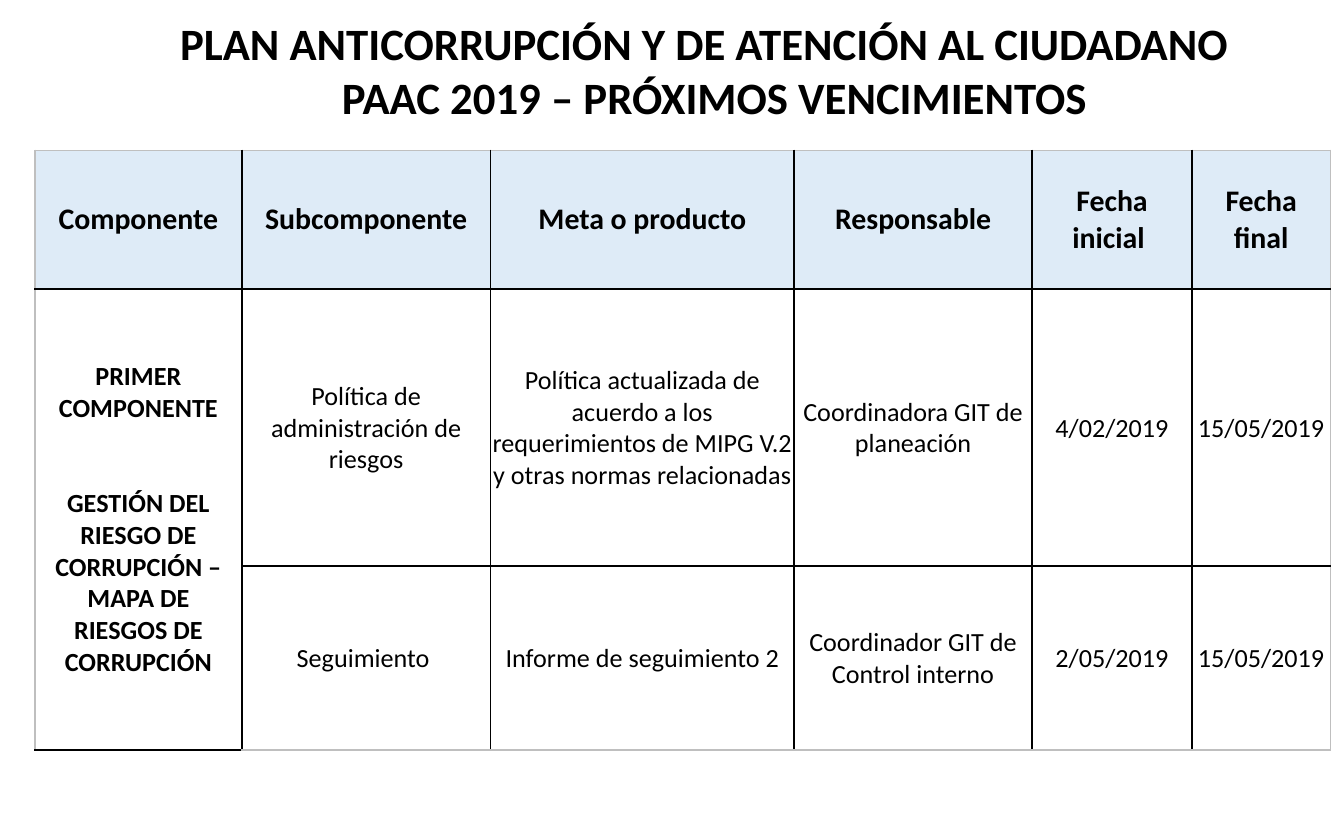
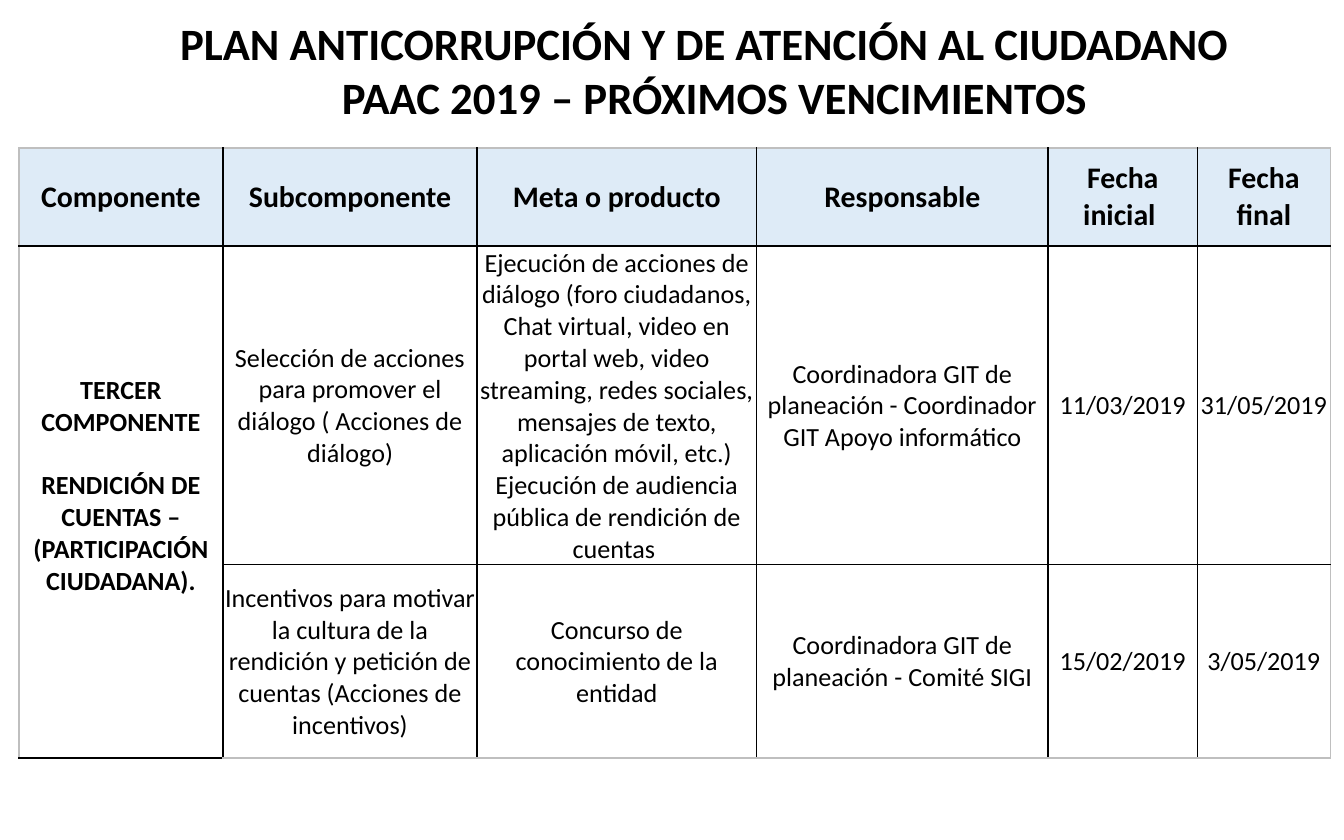
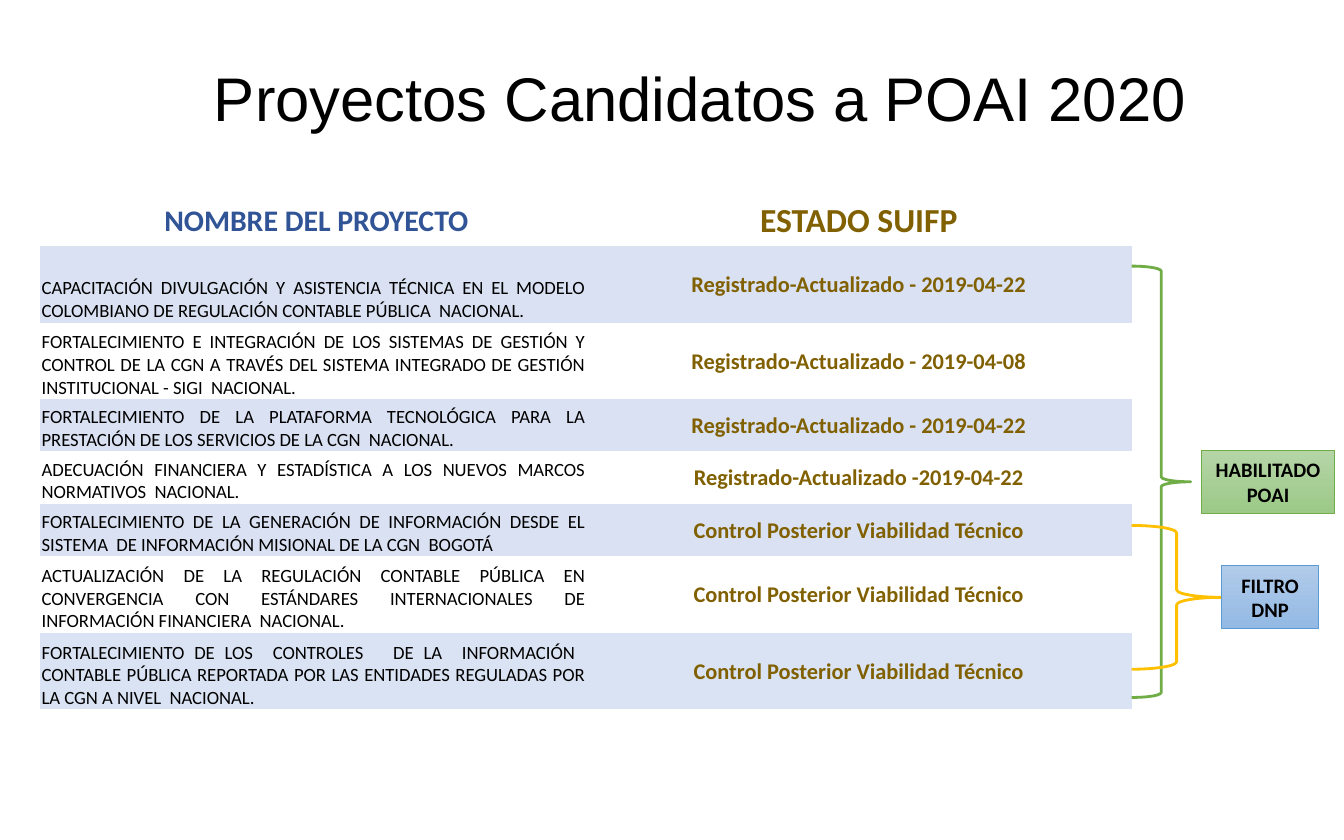
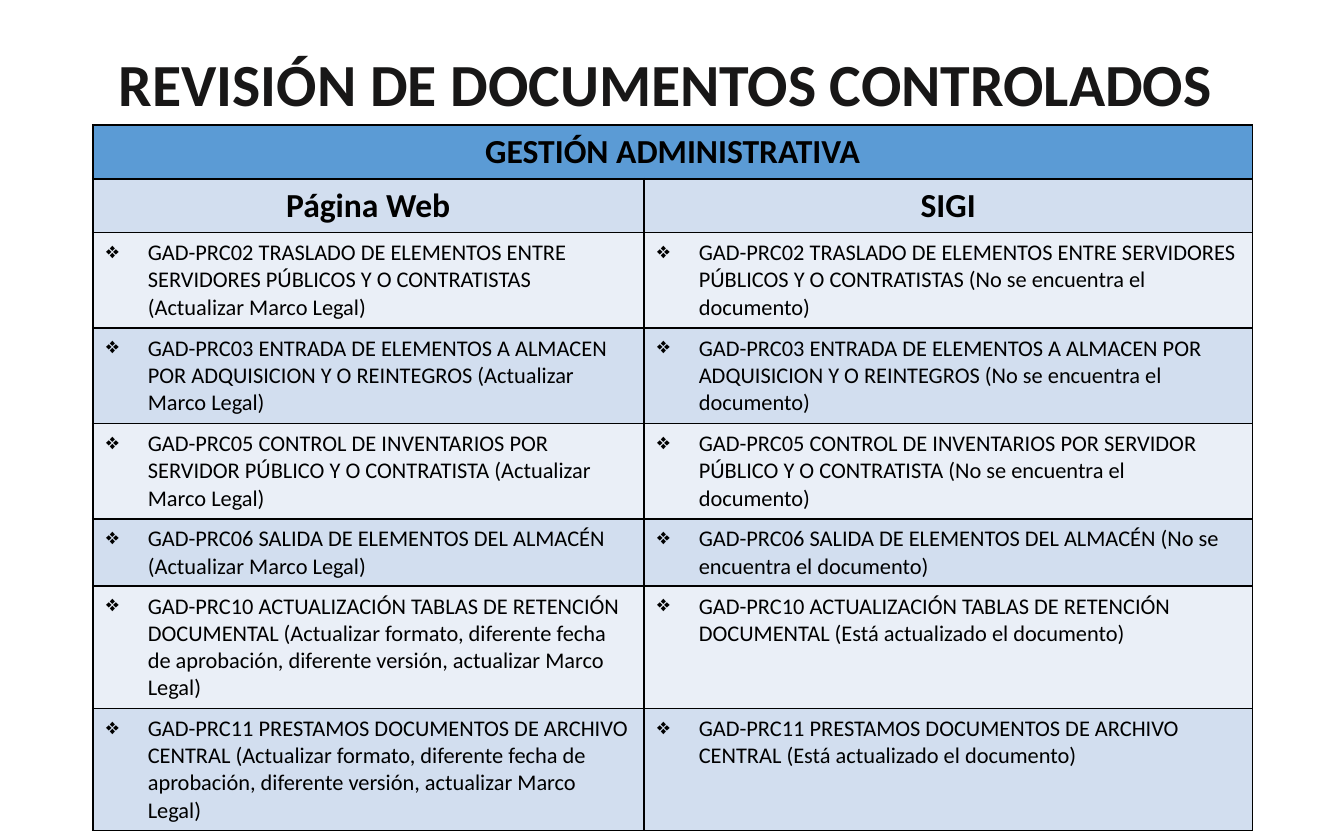
from lxml import etree
from pptx import Presentation
from pptx.dml.color import RGBColor
from pptx.enum.shapes import MSO_SHAPE
from pptx.enum.text import MSO_ANCHOR, PP_ALIGN
from pptx.oxml.ns import qn
from pptx.util import Inches, Pt

CENTER, LEFT, JUSTIFY = PP_ALIGN.CENTER, PP_ALIGN.LEFT, PP_ALIGN.JUSTIFY
TOP, MIDDLE, BOTTOM = MSO_ANCHOR.TOP, MSO_ANCHOR.MIDDLE, MSO_ANCHOR.BOTTOM
RECTANGLE, BRACE = MSO_SHAPE.RECTANGLE, MSO_SHAPE.RIGHT_BRACE

BLACK = RGBColor(0x00, 0x00, 0x00)
INK = RGBColor(0x18, 0x17, 0x17)
GRAY = RGBColor(0xBF, 0xBF, 0xBF)
HEADER_BLUE = RGBColor(0xDE, 0xEB, 0xF7)
TITLE_BLUE = RGBColor(0x30, 0x54, 0x96)
BAND_BLUE = RGBColor(0xD9, 0xE1, 0xF2)
LAST_BAND_BLUE = RGBColor(0xDA, 0xE3, 0xF3)
STRONG_BLUE = RGBColor(0x5B, 0x9B, 0xD5)
MID_BLUE = RGBColor(0xD2, 0xDE, 0xEF)
PALE_BLUE = RGBColor(0xEA, 0xEF, 0xF7)
FILTER_TOP = RGBColor(0xB1, 0xCB, 0xE9)
FILTER_BOTTOM = RGBColor(0x93, 0xB9, 0xE4)
BROWN = RGBColor(0x80, 0x60, 0x00)
GOLD = RGBColor(0xFF, 0xC0, 0x00)
GREEN = RGBColor(0x70, 0xAD, 0x47)
ENABLED_TOP = RGBColor(0xB5, 0xD5, 0xA7)
ENABLED_BOTTOM = RGBColor(0x9C, 0xC9, 0x87)

PLAIN_TABLE = "{2D5ABB26-0587-4C30-8999-92F81FD0307C}"
TIGHT = (0.01, 0.01, 0.01, 0)
BULLET_INDENT = Inches(0.31)


class Deck:
    """Holds the shared style and the slide being built."""

    def __init__(self):
        self.prs = Presentation()
        self.prs.slide_width, self.prs.slide_height = Inches(10), Inches(6.25)
        self.slide = None

    def new_slide(self):
        self.slide = self.prs.slides.add_slide(self.prs.slide_layouts[6])

    def add_text(self, frame, paragraphs, size, bold=False, color=BLACK, font="Calibri",
                 align=CENTER, spacing=None, gap=0, bullet=None):
        frame.word_wrap = True
        for index, text in enumerate(paragraphs):
            paragraph = frame.paragraphs[0] if index == 0 else frame.add_paragraph()
            paragraph.alignment = align
            if spacing:
                paragraph.line_spacing = spacing
            if index and gap:
                paragraph.space_before = Pt(gap)
            if bullet:
                properties = paragraph._p.get_or_add_pPr()
                properties.set("marL", str(BULLET_INDENT))
                properties.set("indent", str(-BULLET_INDENT))
                etree.SubElement(properties, qn("a:buChar")).set("char", bullet)
            for number, line in enumerate(text.split("\n")):
                if number:
                    paragraph.add_line_break()
                run = paragraph.add_run()
                run.text = line
                run.font.name, run.font.size, run.font.bold = font, Pt(size), bold
                run.font.color.rgb = color

    def title(self, box, paragraphs, size, anchor=MIDDLE, **style):
        shape = self.slide.shapes.add_textbox(*map(Inches, box))
        shape.text_frame.vertical_anchor = anchor
        self.add_text(shape.text_frame, paragraphs, size, **style)

    def table(self, left, top, widths, heights):
        table = self.slide.shapes.add_table(
            len(heights), len(widths), Inches(left), Inches(top),
            Inches(sum(widths)), Inches(sum(heights))).table
        table._tbl.tblPr.find(qn("a:tableStyleId")).text = PLAIN_TABLE
        table.first_row = table.horz_banding = False
        for column, width in zip(table.columns, widths):
            column.width = Inches(width)
        for row, height in zip(table.rows, heights):
            row.height = Inches(height)
        return table

    def borders(self, table, outer):
        """Black rules inside the table, the given colour around it."""
        last_row, last_column = len(table.rows) - 1, len(table.columns) - 1
        for r in range(last_row + 1):
            for c in range(last_column + 1):
                properties = table.cell(r, c)._tc.get_or_add_tcPr()
                edges = (("L", c == 0), ("R", c == last_column),
                         ("T", r == 0), ("B", r == last_row))
                for side, is_outer in edges:
                    line = etree.SubElement(properties, qn(f"a:ln{side}"), w=str(Pt(1)))
                    fill = etree.SubElement(line, qn("a:solidFill"))
                    color = outer if is_outer else BLACK
                    etree.SubElement(fill, qn("a:srgbClr"), val=str(color))

    def cell(self, cell, paragraphs, size, fill=None, margins=None, anchor=MIDDLE, **style):
        cell.vertical_anchor = anchor
        if margins:
            (cell.margin_left, cell.margin_right,
             cell.margin_top, cell.margin_bottom) = map(Inches, margins)
        if fill is None:
            cell.fill.background()
        else:
            cell.fill.solid()
            cell.fill.fore_color.rgb = fill
        self.add_text(cell.text_frame, paragraphs, size, **style)

    def shape(self, kind, box, line, width):
        shape = self.slide.shapes.add_shape(kind, *map(Inches, box))
        shape.shadow.inherit = False
        shape.line.color.rgb, shape.line.width = line, Pt(width)
        return shape

    def brace(self, box, color):
        self.shape(BRACE, box, color, 1.5).fill.background()

    def label(self, box, text, line, gradient):
        shape = self.shape(RECTANGLE, box, line, 0.5)
        shape.fill.gradient()
        shape.fill.gradient_angle = 270
        for stop, color, position in zip(shape.fill.gradient_stops, gradient, (0, 1)):
            stop.color.rgb, stop.position = color, position
        self.add_text(shape.text_frame, [text], 11, bold=True)

    def deadlines(self, left, top, widths, heights, component, gap, rows, component_margins=None):
        """A slide of the plan: one component and its upcoming deadlines."""
        self.new_slide()
        table = self.table(left, top, widths, heights)
        self.borders(table, GRAY)
        for column, heading in enumerate(PLAN_HEADINGS):
            self.cell(table.cell(0, column), [heading], 16, HEADER_BLUE, bold=True)
        table.cell(1, 0).merge(table.cell(2, 0))
        self.cell(table.cell(1, 0), component, 14, margins=component_margins,
                  bold=True, gap=gap)
        for r, row in enumerate(rows, 1):
            for c, text in enumerate(row, 1):
                self.cell(table.cell(r, c), [text], 14, margins=TIGHT)
        self.title((0.73, 0.07, 9.17, 0.91), PLAN_TITLE, 24, TOP, bold=True)


PLAN_TITLE = ["PLAN ANTICORRUPCIÓN Y DE ATENCIÓN AL CIUDADANO  ",
              "PAAC 2019 – PRÓXIMOS VENCIMIENTOS"]
PLAN_HEADINGS = ["Componente", "Subcomponente", "Meta o producto", "Responsable",
                 "Fecha inicial ", "Fecha final"]

RISK_ROWS = [
    ("Política de administración de riesgos",
     "Política actualizada de acuerdo a los requerimientos de MIPG V.2 y otras normas relacionadas",
     "Coordinadora GIT de planeación", "4/02/2019", "15/05/2019"),
    ("Seguimiento ", "Informe de seguimiento 2",
     "Coordinador GIT de Control interno", "2/05/2019", "15/05/2019"),
]

ACCOUNTABILITY_ROWS = [
    ("Selección de acciones para promover el diálogo ( Acciones de diálogo)",
     "Ejecución de acciones de diálogo (foro ciudadanos, Chat virtual, video en portal web, "
     "video streaming, redes sociales, mensajes de texto, aplicación móvil, etc.)\n"
     "Ejecución de audiencia pública de rendición de cuentas ",
     "Coordinadora GIT de planeación - Coordinador GIT Apoyo informático",
     "11/03/2019", "31/05/2019"),
    ("Incentivos para motivar la cultura de la rendición y petición de cuentas "
     "(Acciones de incentivos)",
     "Concurso de conocimiento de la entidad",
     "Coordinadora GIT de planeación - Comité SIGI", "15/02/2019", "3/05/2019"),
]

REVIEW = "Control Posterior Viabilidad Técnico"
UPDATED = "Registrado-Actualizado - 2019-04-22"
PROJECTS = [
    ("CAPACITACIÓN DIVULGACIÓN Y ASISTENCIA TÉCNICA EN EL MODELO COLOMBIANO DE REGULACIÓN "
     "CONTABLE PÚBLICA  NACIONAL.", UPDATED, BAND_BLUE),
    ("FORTALECIMIENTO E INTEGRACIÓN DE LOS SISTEMAS DE GESTIÓN Y CONTROL DE LA CGN A TRAVÉS "
     "DEL SISTEMA INTEGRADO DE GESTIÓN INSTITUCIONAL - SIGI  NACIONAL.",
     "Registrado-Actualizado - 2019-04-08", None),
    ("FORTALECIMIENTO DE LA PLATAFORMA TECNOLÓGICA PARA LA PRESTACIÓN DE LOS SERVICIOS "
     "DE LA CGN  NACIONAL.", UPDATED, BAND_BLUE),
    ("ADECUACIÓN FINANCIERA Y ESTADÍSTICA A LOS NUEVOS MARCOS NORMATIVOS  NACIONAL.",
     "Registrado-Actualizado -2019-04-22", None),
    ("FORTALECIMIENTO DE LA GENERACIÓN DE INFORMACIÓN DESDE EL SISTEMA  DE INFORMACIÓN "
     "MISIONAL DE LA CGN  BOGOTÁ", REVIEW, BAND_BLUE),
    ("ACTUALIZACIÓN DE LA REGULACIÓN CONTABLE PÚBLICA EN CONVERGENCIA CON ESTÁNDARES "
     "INTERNACIONALES DE INFORMACIÓN FINANCIERA  NACIONAL.", REVIEW, None),
    ("FORTALECIMIENTO DE LOS  CONTROLES   DE LA  INFORMACIÓN  CONTABLE PÚBLICA REPORTADA POR "
     "LAS ENTIDADES REGULADAS POR LA CGN A NIVEL  NACIONAL.", REVIEW, LAST_BAND_BLUE),
]

LEGAL = "(Actualizar Marco Legal)"
FORMAT = ("(Actualizar formato, diferente fecha de aprobación, diferente versión, "
          "actualizar Marco Legal)")
MISSING = "(No se encuentra el documento)"
CURRENT = "(Está actualizado el documento)"
DOCUMENTS = [
    ("GAD-PRC02 TRASLADO DE ELEMENTOS ENTRE SERVIDORES PÚBLICOS Y O CONTRATISTAS", LEGAL, MISSING),
    ("GAD-PRC03 ENTRADA DE ELEMENTOS A ALMACEN POR ADQUISICION Y O REINTEGROS", LEGAL, MISSING),
    ("GAD-PRC05 CONTROL DE INVENTARIOS POR SERVIDOR PÚBLICO Y O CONTRATISTA", LEGAL, MISSING),
    ("GAD-PRC06 SALIDA DE ELEMENTOS DEL ALMACÉN", LEGAL, MISSING),
    ("GAD-PRC10 ACTUALIZACIÓN TABLAS DE RETENCIÓN DOCUMENTAL", FORMAT, CURRENT),
    ("GAD-PRC11 PRESTAMOS DOCUMENTOS DE ARCHIVO CENTRAL", FORMAT, CURRENT),
]


def projects(deck):
    deck.new_slide()
    deck.title((0.99, 0.15, 8.44, 1.21), ["Proyectos Candidatos a POAI 2020"], 33,
               font="Arial", spacing=0.9)

    # Projects and their status
    table = deck.table(0.3, 1.45, [4.06] * 2, [0.38, 0.57, 0.57, 0.39, 0.39, 0.39, 0.57, 0.57])
    deck.cell(table.cell(0, 0), [" NOMBRE DEL PROYECTO"], 16, margins=TIGHT,
              bold=True, color=TITLE_BLUE)
    deck.cell(table.cell(0, 1), ["ESTADO SUIFP"], 18, margins=TIGHT, bold=True, color=BROWN)
    for row, (project, status, fill) in enumerate(PROJECTS, 1):
        deck.cell(table.cell(row, 0), [project], 10, fill, TIGHT, BOTTOM, align=JUSTIFY)
        deck.cell(table.cell(row, 1), [status], 12, fill, TIGHT, bold=True, color=BROWN)

    # Groups at the right
    deck.label((8.94, 3.35, 0.99, 0.47), "HABILITADO POAI", GREEN, (ENABLED_TOP, ENABLED_BOTTOM))
    deck.brace((8.42, 1.98, 0.44, 3.21), GREEN)
    deck.brace((8.42, 3.91, 0.67, 1.07), GOLD)
    deck.label((9.09, 4.21, 0.72, 0.47), "FILTRO DNP", STRONG_BLUE, (FILTER_TOP, FILTER_BOTTOM))


def documents(deck):
    deck.new_slide()
    table = deck.table(0.69, 0.93, [4.1, 4.53], [0.4, 0.4, 0.71, 0.71, 0.71, 0.5, 0.91, 0.91])
    deck.borders(table, BLACK)
    table.cell(0, 0).merge(table.cell(0, 1))
    deck.cell(table.cell(0, 0), ["GESTIÓN ADMINISTRATIVA"], 18, STRONG_BLUE, anchor=TOP, bold=True)
    for column, heading in enumerate(("Página Web", "SIGI")):
        deck.cell(table.cell(1, column), [heading], 18, MID_BLUE, anchor=TOP, bold=True)
    for row, (document, *findings) in enumerate(DOCUMENTS, 2):
        fill = MID_BLUE if row % 2 else PALE_BLUE
        for column, finding in enumerate(findings):
            deck.cell(table.cell(row, column), [f"{document} {finding}"], 12, fill,
                      anchor=TOP, align=LEFT, bullet="❖")
    deck.title((0.56, 0.1, 8.89, 1.09), ["REVISIÓN DE DOCUMENTOS CONTROLADOS "], 32,
               bold=True, color=INK, spacing=0.9)


def main():
    deck = Deck()
    deck.deadlines(
        0.26, 1.12, [1.54, 1.85, 2.26, 1.77, 1.19, 1.03], [1.03, 2.06, 1.37],
        ["PRIMER COMPONENTE", "GESTIÓN DEL RIESGO DE CORRUPCIÓN – MAPA DE RIESGOS DE CORRUPCIÓN"],
        34, RISK_ROWS)
    deck.deadlines(
        0.14, 1.1, [1.52, 1.89, 2.08, 2.17, 1.11, 0.99], [0.73, 2.37, 1.44],
        ["TERCER COMPONENTE", "RENDICIÓN DE CUENTAS – (PARTICIPACIÓN CIUDADANA)."],
        17, ACCOUNTABILITY_ROWS, component_margins=(0.1, 0.1, 0.05, 0.29))
    projects(deck)
    documents(deck)
    deck.prs.save("out.pptx")


if __name__ == "__main__":
    main()
